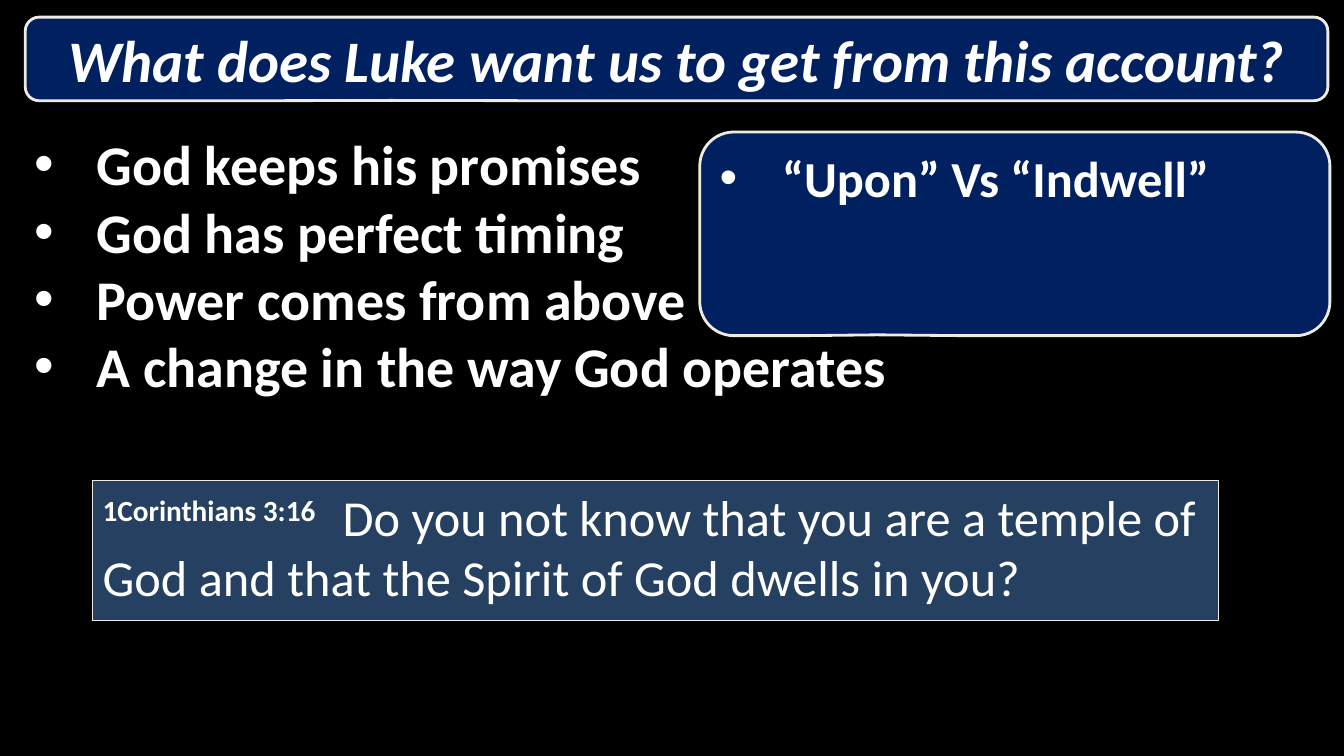
from pptx import Presentation
from pptx.dml.color import RGBColor
from pptx.enum import shapes, text
from pptx.oxml.ns import qn
from pptx.util import Inches, Pt
from lxml import etree

TITLE = "What does Luke want us to get from this account?"
LESSONS = [
    "God keeps his promises",
    "God has perfect timing",
    "Power comes from above",
    "A change in the way God operates",
]
CONTRAST = ["“Upon” Vs “Indwell”"]
VERSE_REF = "1Corinthians 3:16"
VERSE = "Do you not know that you are a temple of God and that the Spirit of God dwells in you?"

THEME = {
    "font": "Calibri",
    "background": "000000", "text": "FFFFFF", "outline": "EEECE1",
    "panel": "002060", "verse_fill": "254061",
    "title_size": 42, "lesson_size": 40, "body_size": 36,
}
CALLOUT = shapes.MSO_SHAPE.ROUNDED_RECTANGULAR_CALLOUT
CALLOUT_ADJUSTMENTS = (-0.219, 0.496, 0.167)
HANGING = Inches(0.62)
VERSE_TAB = Inches(2.38)


def color(name):
    return RGBColor.from_string(THEME[name])


def add_panel(slide, kind, box, fill=None, line_width=None):
    panel = slide.shapes.add_shape(kind, *map(Inches, box))
    panel.shadow.inherit = False
    if kind == CALLOUT:
        for i, value in enumerate(CALLOUT_ADJUSTMENTS):
            panel.adjustments[i] = value
    if fill:
        panel.fill.solid()
        panel.fill.fore_color.rgb = color(fill)
    else:
        panel.fill.background()
    if line_width:
        panel.line.color.rgb = color("outline")
        panel.line.width = Pt(line_width)
    else:
        panel.line.fill.background()
    panel.text_frame.word_wrap = True
    panel.text_frame.vertical_anchor = text.MSO_ANCHOR.TOP
    return panel.text_frame


def write(frame, lines, size, align=text.PP_ALIGN.LEFT):
    frame.text = "\n".join(lines)
    for paragraph in frame.paragraphs:
        paragraph.alignment = align
        for run in paragraph.runs:
            style(run, size)


def style(run, size, bold=True):
    run.font.name = THEME["font"]
    run.font.size = Pt(THEME[size])
    run.font.bold = bold
    run.font.color.rgb = color("text")


def add_bullets(frame):
    for paragraph in frame.paragraphs:
        properties = paragraph._p.get_or_add_pPr()
        properties.set("marL", str(HANGING))
        properties.set("indent", str(-HANGING))
        etree.SubElement(properties, qn("a:buFont"), typeface="Arial")
        etree.SubElement(properties, qn("a:buChar"), char="•")


def write_verse(frame):
    """Raised reference, then the verse starting at a tab stop."""
    write(frame, [VERSE_REF], "body_size")
    paragraph = frame.paragraphs[0]
    paragraph.runs[0].font._element.set("baseline", "30000")
    verse = paragraph.add_run()
    verse.text = "\t" + VERSE
    style(verse, "body_size", bold=False)
    tabs = etree.SubElement(paragraph._p.get_or_add_pPr(), qn("a:tabLst"))
    etree.SubElement(tabs, qn("a:tab"), pos=str(VERSE_TAB), algn="l")


def main():
    deck = Presentation()
    deck.slide_width, deck.slide_height = Inches(13.33), Inches(7.5)
    slide = deck.slides.add_slide(deck.slide_layouts[6])
    slide.background.fill.solid()
    slide.background.fill.fore_color.rgb = color("background")

    title = add_panel(slide, CALLOUT, (0.25, 0.17, 12.92, 0.83), "panel", 2)
    title.vertical_anchor = text.MSO_ANCHOR.MIDDLE
    write(title, [TITLE], "title_size", text.PP_ALIGN.CENTER)
    title.paragraphs[0].runs[0].font.italic = True

    lessons = add_panel(slide, CALLOUT, (0, 1, 9.33, 4.91))
    write(lessons, LESSONS, "lesson_size")
    add_bullets(lessons)

    contrast = add_panel(slide, CALLOUT, (6.94, 1.31, 6.25, 2.02), "panel", 2)
    write(contrast, CONTRAST, "body_size")
    add_bullets(contrast)

    verse = add_panel(slide, shapes.MSO_SHAPE.RECTANGLE,
                      (0.92, 4.77, 11.17, 1.39), "verse_fill", 0.75)
    write_verse(verse)

    deck.save("out.pptx")


if __name__ == "__main__":
    main()
